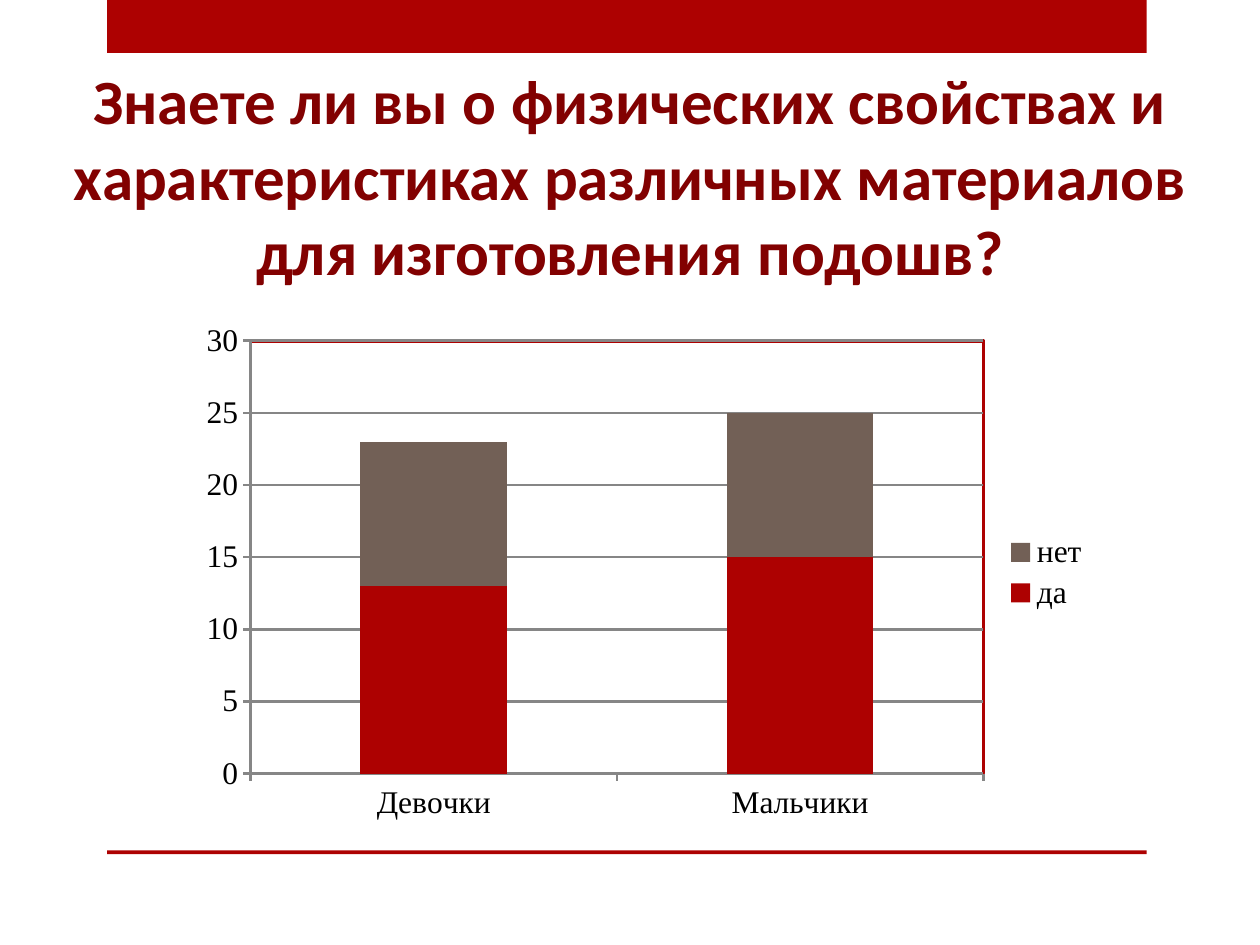
import lxml.etree
import pptx
import pptx.chart.data
import pptx.dml.color
import pptx.enum.chart
import pptx.enum.shapes
import pptx.enum.text
import pptx.oxml
import pptx.oxml.ns
import pptx.util
from pptx.util import Inches

COLORS = {
    "red": "AD0101",
    "dark_red": "820101",
    "brown": "726056",
    "grid": "868686",
    "black": "000000",
    "white": "FFFFFF",
}
CATEGORIES = ["Девочки", "Мальчики"]
ANSWERS = [("да", [13, 15], "red"), ("нет", [10, 10], "brown")]
QUESTION = (
    "Знаете ли вы о физических свойствах и характеристиках "
    "различных материалов для изготовления подошв?"
)


def rgb(name):
    return pptx.dml.color.RGBColor.from_string(COLORS[name])


def add_band(slide, left, top, width, height):
    band = slide.shapes.add_shape(
        pptx.enum.shapes.MSO_SHAPE.RECTANGLE, left, top, width, height
    )
    band.shadow.inherit = False
    band.fill.solid()
    band.fill.fore_color.rgb = rgb("red")
    band.line.fill.background()


def add_question(slide, left, top, width, height):
    frame = slide.shapes.add_textbox(left, top, width, height).text_frame
    frame.word_wrap = True
    frame.vertical_anchor = pptx.enum.text.MSO_ANCHOR.TOP
    frame.margin_top = Inches(0.1)
    paragraph = frame.paragraphs[0]
    paragraph.text = QUESTION
    paragraph.alignment = pptx.enum.text.PP_ALIGN.CENTER
    paragraph.font.name = "Calibri"
    paragraph.font.size = pptx.util.Pt(36)
    paragraph.font.bold = True
    paragraph.font.color.rgb = rgb("dark_red")


def style_plot_area(chart, x, y, w, h):
    qn = pptx.oxml.ns.qn
    plot_area = chart.plots[0]._element.getparent()
    for old_layout in plot_area.findall(qn("c:layout")):
        plot_area.remove(old_layout)
    layout = lxml.etree.Element(qn("c:layout"))
    manual = lxml.etree.SubElement(layout, qn("c:manualLayout"))
    settings = [
        ("layoutTarget", "inner"), ("xMode", "edge"), ("yMode", "edge"),
        ("x", x), ("y", y), ("w", w), ("h", h),
    ]
    for tag, value in settings:
        lxml.etree.SubElement(manual, qn(f"c:{tag}")).set("val", str(value))
    plot_area.insert(0, layout)
    plot_area.append(pptx.oxml.parse_xml(
        f'<c:spPr {pptx.oxml.ns.nsdecls("c", "a")}>'
        f'<a:solidFill><a:srgbClr val="{COLORS["white"]}"/></a:solidFill>'
        f'<a:ln w="25400"><a:solidFill><a:srgbClr val="{COLORS["red"]}"/>'
        '</a:solidFill></a:ln></c:spPr>'
    ))


def style_axis_line(line):
    line.color.rgb = rgb("grid")
    line.width = pptx.util.Pt(1.5)


def add_answers_chart(slide, left, top, width, height):
    data = pptx.chart.data.CategoryChartData()
    data.categories = CATEGORIES
    for answer, counts, _ in ANSWERS:
        data.add_series(answer, counts)
    chart = slide.shapes.add_chart(
        pptx.enum.chart.XL_CHART_TYPE.COLUMN_STACKED,
        left, top, width, height, data,
    ).chart
    chart.has_title = False
    chart.font.name = "Times New Roman"
    chart.font.size = pptx.util.Pt(18)
    chart.font.color.rgb = rgb("black")

    columns = chart.plots[0]
    columns.vary_by_categories = False
    columns.gap_width = 150
    columns.overlap = 100
    for series, (_, _, color) in zip(columns.series, ANSWERS):
        series.format.fill.solid()
        series.format.fill.fore_color.rgb = rgb(color)

    for axis in (chart.category_axis, chart.value_axis):
        axis.major_tick_mark = pptx.enum.chart.XL_TICK_MARK.OUTSIDE
        style_axis_line(axis.format.line)
    counts_axis = chart.value_axis
    counts_axis.minimum_scale = 0
    counts_axis.maximum_scale = 30
    counts_axis.major_unit = 5
    counts_axis.has_major_gridlines = True
    style_axis_line(counts_axis.major_gridlines.format.line)

    chart.has_legend = True
    chart.legend.position = pptx.enum.chart.XL_LEGEND_POSITION.RIGHT
    chart.legend.include_in_layout = False
    style_plot_area(chart, 0.07, 0.05, 0.8, 0.84)


def main():
    presentation = pptx.Presentation()
    presentation.slide_width = Inches(10)
    presentation.slide_height = Inches(7.5)
    slide = presentation.slides.add_slide(presentation.slide_layouts[6])
    for top, height in ((0, 0.42), (6.75, 0.03)):
        add_band(slide, Inches(0.85), Inches(top), Inches(8.25), Inches(height))
    add_question(slide, Inches(0.39), Inches(0.39), Inches(9.22), Inches(2.73))
    add_answers_chart(slide, Inches(1.48), Inches(2.5), Inches(7.27), Inches(4.09))
    presentation.save("out.pptx")


if __name__ == "__main__":
    main()
